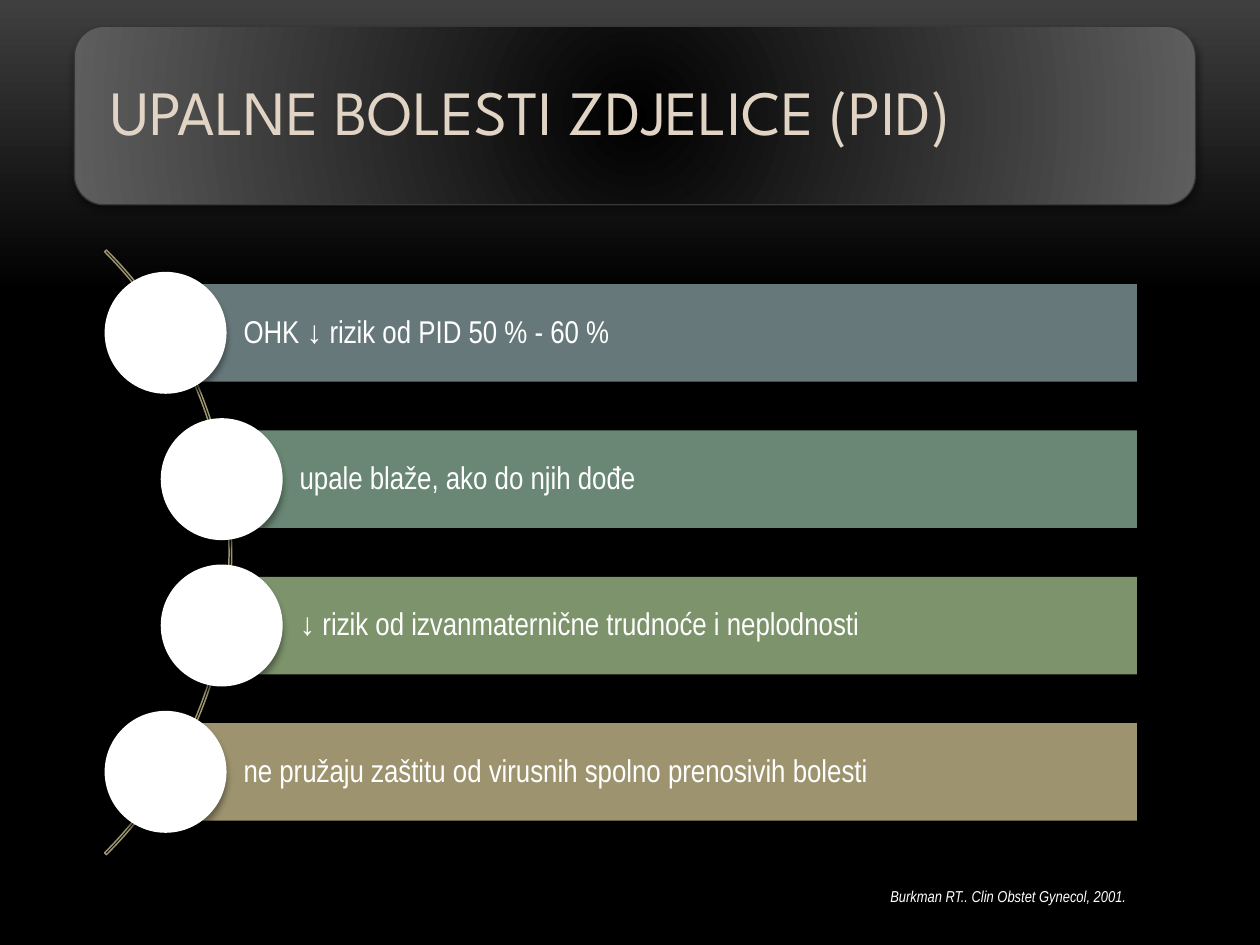
import lxml.etree
import pptx
import pptx.dml.color
import pptx.enum.shapes
import pptx.enum.text
import pptx.oxml.ns
import pptx.util

Cm = pptx.util.Cm
Pt = pptx.util.Pt
RGBColor = pptx.dml.color.RGBColor
SHAPE = pptx.enum.shapes.MSO_SHAPE
ANCHOR = pptx.enum.text.MSO_ANCHOR
ALIGN = pptx.enum.text.PP_ALIGN
qn = pptx.oxml.ns.qn

BLACK = RGBColor(0x00, 0x00, 0x00)
WHITE = RGBColor(0xFF, 0xFF, 0xFF)
CHARCOAL = RGBColor(0x3F, 0x3F, 0x3F)
PANEL_GREY = RGBColor(0x5E, 0x5E, 0x5E)
PANEL_EDGE = RGBColor(0x34, 0x37, 0x3B)
CREAM = RGBColor(0xE1, 0xD4, 0xC5)
SLATE = RGBColor(0x67, 0x78, 0x7B)
TEAL = RGBColor(0x69, 0x87, 0x74)
GREEN = RGBColor(0x7C, 0x93, 0x6B)
SAND = RGBColor(0x9D, 0x93, 0x6F)

TITLE_FONT = "League Spartan"
BODY_FONT = "Arial Narrow"

FACTS = [
    ("OHK ↓ rizik od PID 50 % - 60 %", SLATE),
    ("upale blaže, ako do njih dođe", TEAL),
    ("↓ rizik od izvanmaternične trudnoće i neplodnosti", GREEN),
    ("ne pružaju zaštitu od virusnih spolno prenosivih bolesti", SAND),
]


def set_gradient(fill, stops):
    """Give a fill a gradient between two (position, colour) stops."""
    fill.gradient()
    for stop, (position, colour) in zip(fill.gradient_stops, stops):
        stop.position = position
        stop.color.rgb = colour


def make_radial(shape):
    """Turn the linear gradient of a shape into a circular one."""
    gradient = shape.fill._xPr.find(qn("a:gradFill"))
    linear = gradient.find(qn("a:lin"))
    if linear is not None:
        gradient.remove(linear)
    circle = lxml.etree.SubElement(gradient, qn("a:path"), path="circle")
    lxml.etree.SubElement(circle, qn("a:fillToRect"),
                          {side: "100000" for side in "ltrb"})


def add_shadow(shape, distance):
    """Add a soft black shadow that falls below a shape."""
    shape.shadow.inherit = False
    effects = shape._element.spPr.find(qn("a:effectLst"))
    outer = lxml.etree.SubElement(effects, qn("a:outerShdw"), blurRad=str(Pt(4)),
                                  dist=str(Pt(distance)), dir="5400000", rotWithShape="0")
    black = lxml.etree.SubElement(outer, qn("a:srgbClr"), val=str(BLACK))
    lxml.etree.SubElement(black, qn("a:alpha"), val="40000")


def add_solid(slide, kind, box, colour):
    """Add a borderless, shadowed shape in one colour."""
    shape = slide.shapes.add_shape(kind, *map(Cm, box))
    shape.fill.solid()
    shape.fill.fore_color.rgb = colour
    shape.line.fill.background()
    add_shadow(shape, 3.4)
    return shape


def write_line(shape, text, font_name, size, colour, inset):
    """Write one left-aligned line, centred vertically in a shape."""
    frame = shape.text_frame
    frame.text = text
    frame.word_wrap = True
    frame.vertical_anchor = ANCHOR.MIDDLE
    frame.margin_left = Cm(inset)
    line = frame.paragraphs[0]
    line.alignment = ALIGN.LEFT
    line.line_spacing = 0.9
    font = line.runs[0].font
    font.name, font.size = font_name, Pt(size)
    font.color.rgb = colour


def paint_background(slide):
    """Fade the slide from charcoal at the top to black."""
    fill = slide.background.fill
    set_gradient(fill, [(0, CHARCOAL), (0.31, BLACK)])
    fill.gradient_angle = 270


def add_title_panel(slide, left, top, width, height):
    """Place the rounded title panel."""
    panel = slide.shapes.add_shape(SHAPE.ROUNDED_RECTANGLE, *map(Cm, (left, top, width, height)))
    set_gradient(panel.fill, [(0, BLACK), (1, PANEL_GREY)])
    make_radial(panel)
    panel.line.color.rgb = PANEL_EDGE
    panel.line.width = Pt(0.75)
    add_shadow(panel, 2)
    write_line(panel, "UPALNE BOLESTI ZDJELICE (PID)", TITLE_FONT, 36, CREAM, 0.56)


def add_fact_arc(slide, left, top, width, height):
    """Place the fact bars with their dots along an arc."""
    middle = top + height / 2
    diameter = height * 2 ** 0.5
    arc = slide.shapes.add_shape(SHAPE.BLOCK_ARC, Cm(left + 2.56 - diameter),
                                 Cm(middle - diameter / 2), Cm(diameter), Cm(diameter))
    for index, value in enumerate((189, 27, 0.003)):
        arc.adjustments[index] = value
    arc.fill.background()
    arc.line.color.rgb = SAND
    arc.line.width = Pt(0.85)
    arc.shadow.inherit = False

    pitch = 2.95
    bar_height, dot = pitch * 2 / 3, pitch * 5 / 6
    last = len(FACTS) - 1
    for row, (fact, colour) in enumerate(FACTS):
        centre_x = left + (dot / 2 if row in (0, last) else 2.36)
        centre_y = middle + (row - last / 2) * pitch
        bar = add_solid(slide, SHAPE.RECTANGLE,
                        (centre_x, centre_y - bar_height / 2,
                         left + width - centre_x, bar_height), colour)
        write_line(bar, fact, BODY_FONT, 18, WHITE, 1.57)
        add_solid(slide, SHAPE.OVAL,
                  (centre_x - dot / 2, centre_y - dot / 2, dot, dot), WHITE)


def add_citation(slide, left, top, width, height):
    """Place the source line."""
    citation = slide.shapes.add_textbox(*map(Cm, (left, top, width, height)))
    frame = citation.text_frame
    frame.text = "Burkman RT.. Clin Obstet Gynecol, 2001."
    frame.word_wrap = False
    frame.auto_size = pptx.enum.text.MSO_AUTO_SIZE.SHAPE_TO_FIT_TEXT
    font = frame.paragraphs[0].runs[0].font
    font.name, font.size, font.italic = BODY_FONT, Pt(9), True
    font.color.rgb = WHITE


def main():
    """Build and save the slide."""
    presentation = pptx.Presentation()
    presentation.slide_width, presentation.slide_height = Cm(25.4), Cm(19.05)
    slide = presentation.slides.add_slide(presentation.slide_layouts[6])
    paint_background(slide)
    add_title_panel(slide, 1.5, 0.53, 22.6, 3.6)
    add_fact_arc(slide, 2.11, 5.04, 20.81, 12.19)
    add_citation(slide, 17.7, 17.75, 5.41, 0.64)
    presentation.save("out.pptx")


if __name__ == "__main__":
    main()
